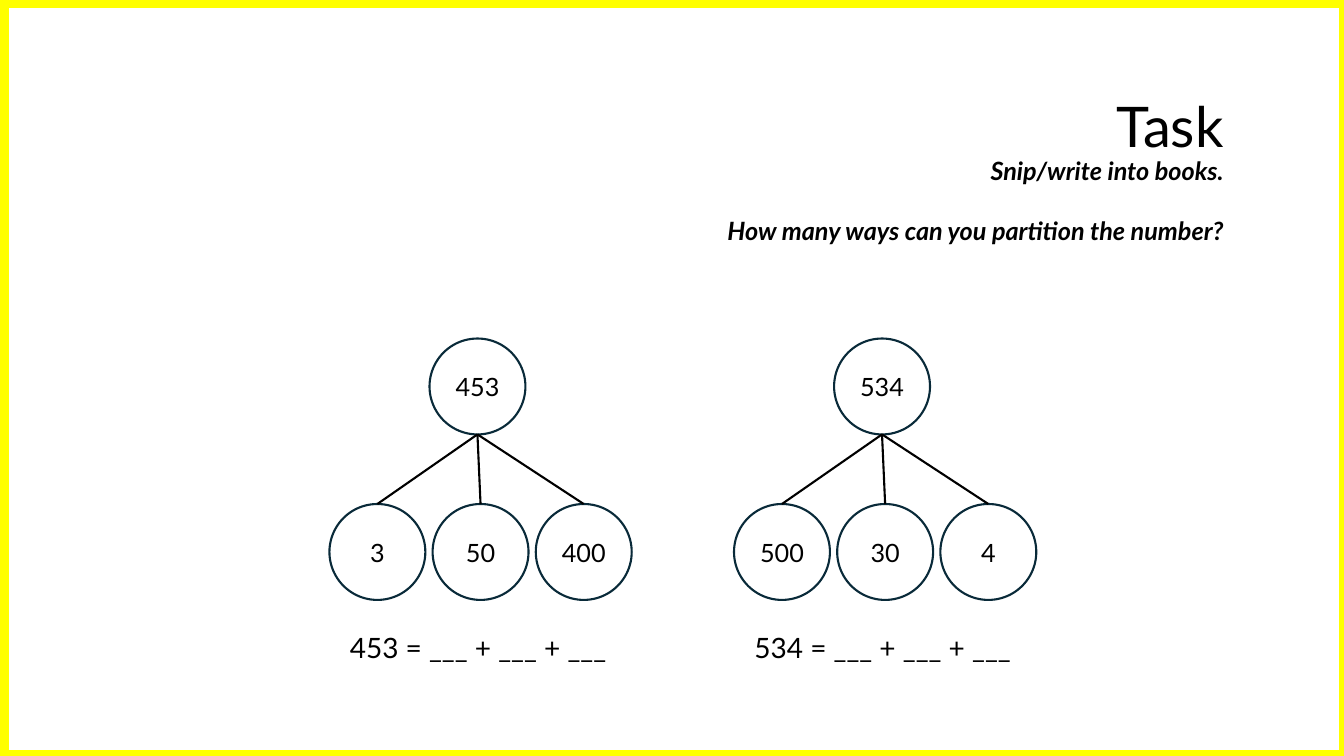
from lxml.etree import SubElement
from pptx import Presentation
from pptx.dml.color import RGBColor
from pptx.enum.shapes import MSO_CONNECTOR, MSO_SHAPE
from pptx.enum.text import MSO_ANCHOR, MSO_AUTO_SIZE, PP_ALIGN
from pptx.oxml.ns import qn
from pptx.util import Pt

TITLE = "Task"
INSTRUCTIONS = ["Snip/write into books.", "How many ways can you partition the number?"]
TREES = [("453", ["3", "50", "400"]), ("534", ["500", "30", "4"])]
BLANKS = " = ___ + ___ + ___"

FONT = "Lato"
BLACK, NAVY, YELLOW = "000000", "092A39", "FFFF00"
PAGE_WIDTH, PAGE_HEIGHT = 960, 540

TREE_LEFT, TREE_STEP = 235.3, 289
CIRCLE, PART_STEP, WHOLE_SHIFT = 68.5, 73.7, 71.5
WHOLE_TOP, PART_TOP, SUM_TOP = 241.8, 360, 447.1
SUM_WIDTH, SUM_HEIGHT = 212.4, 31.7


def color(value):
    return RGBColor.from_string(value)


def write(frame, lines, size, align, emphasis=False, gap=0):
    for index, line in enumerate(lines):
        para = frame.paragraphs[0] if index == 0 else frame.add_paragraph()
        para.text = line
        para.alignment = align
        if index:
            para.space_before = Pt(gap)
        font = para.font
        font.name, font.size = FONT, Pt(size)
        font.bold = font.italic = emphasis
        font.color.rgb = color(BLACK)


def add_text(page, lines, left, top, width, height, size, align, **style):
    box = page.shapes.add_textbox(Pt(left), Pt(top), Pt(width), Pt(height))
    box.text_frame.word_wrap = True
    write(box.text_frame, lines, size, align, **style)


def add_outline(page, kind, left, top, width, height, line_color, line_width):
    """Add an unfilled preset shape."""
    shape = page.shapes.add_shape(kind, Pt(left), Pt(top), Pt(width), Pt(height))
    shape.shadow.inherit = False
    shape.fill.background()
    shape.line.color.rgb = color(line_color)
    shape.line.width = Pt(line_width)
    return shape


def add_circle(page, number, left, top):
    circle = add_outline(page, MSO_SHAPE.OVAL, left, top, CIRCLE, CIRCLE, NAVY, 1.5)
    circle.text_frame.vertical_anchor = MSO_ANCHOR.MIDDLE
    write(circle.text_frame, [number], 18, PP_ALIGN.CENTER)
    return circle


def add_branch(page, whole, part):
    """Join the bottom of the whole to the top of a part."""
    start_x, start_y = whole.left + whole.width // 2, whole.top + whole.height
    branch = page.shapes.add_connector(
        MSO_CONNECTOR.STRAIGHT, start_x, start_y, part.left + part.width // 2, part.top)
    branch.end_connect(part, 0)
    branch.line.color.rgb = color(BLACK)
    branch.line.width = Pt(1.5)
    SubElement(branch._element.spPr, qn("a:effectLst"))


def add_tree(page, number, parts, left):
    whole = add_circle(page, number, left + WHOLE_SHIFT, WHOLE_TOP)
    for index, part in enumerate(parts):
        circle = add_circle(page, part, left + index * PART_STEP, PART_TOP)
        add_branch(page, whole, circle)
    add_text(page, [number + BLANKS], left, SUM_TOP, SUM_WIDTH, SUM_HEIGHT,
             20, PP_ALIGN.CENTER)


def main():
    deck = Presentation()
    deck.slide_width, deck.slide_height = Pt(PAGE_WIDTH), Pt(PAGE_HEIGHT)
    page = deck.slides.add_slide(deck.slide_layouts[5])

    title = page.shapes.title
    title.left, title.top, title.width, title.height = Pt(789.8), Pt(61.9), Pt(91.4), Pt(55.7)
    frame = title.text_frame
    frame.auto_size = MSO_AUTO_SIZE.NONE
    frame.word_wrap = False
    frame.vertical_anchor = MSO_ANCHOR.TOP
    write(frame, [TITLE], 40, PP_ALIGN.RIGHT)

    add_text(page, INSTRUCTIONS, 483.8, 107.3, 397.4, 72.7, 18, PP_ALIGN.RIGHT,
             emphasis=True, gap=21.6)
    add_outline(page, MSO_SHAPE.RECTANGLE, 1.4, 0.7, PAGE_WIDTH, PAGE_HEIGHT, YELLOW, 10)

    for index, (number, parts) in enumerate(TREES):
        add_tree(page, number, parts, TREE_LEFT + index * TREE_STEP)

    deck.save("out.pptx")


if __name__ == "__main__":
    main()
